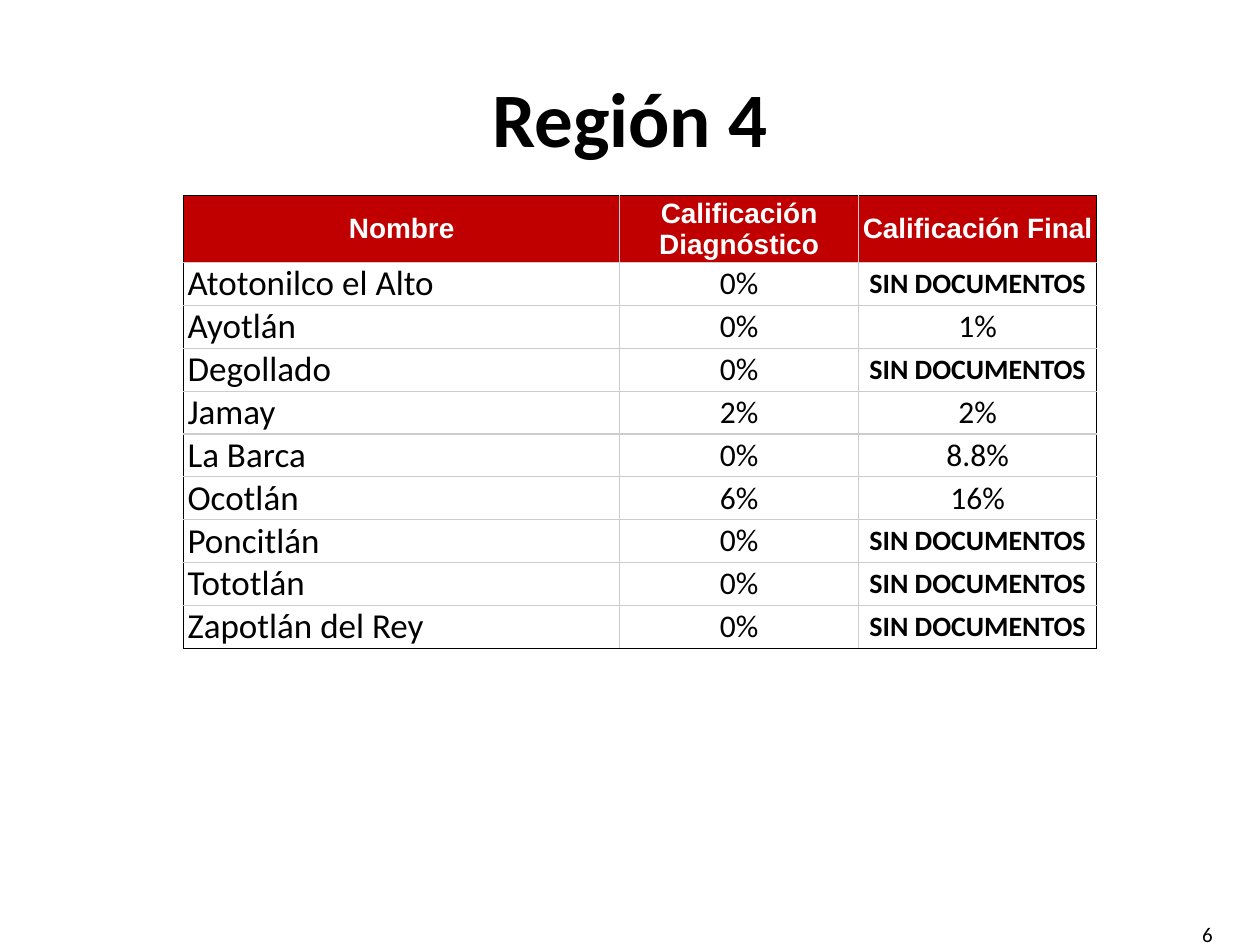
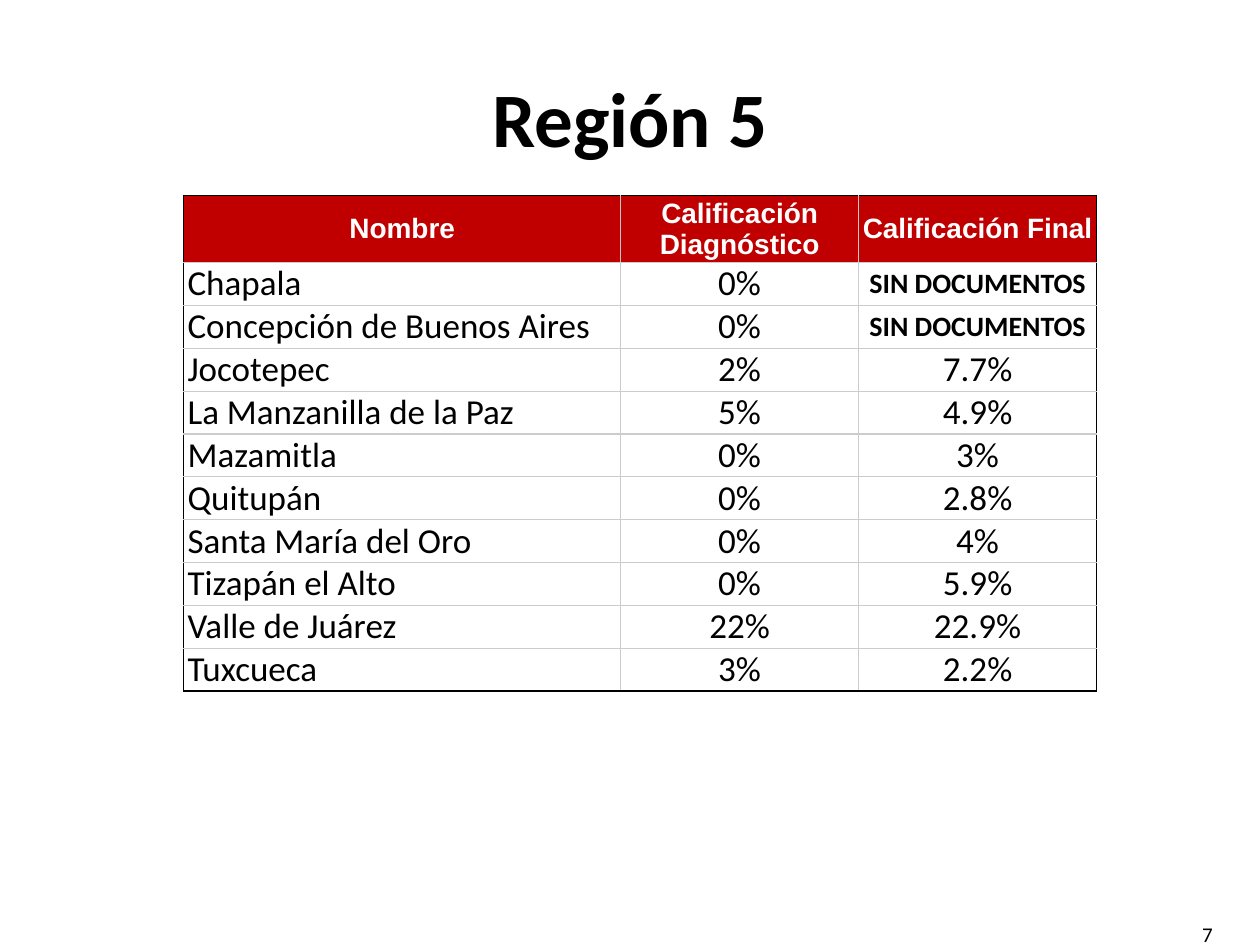
"""Build the regional score tables, one slide per region."""
from lxml.etree import SubElement
from pptx import Presentation
from pptx.dml.color import RGBColor
from pptx.enum.text import MSO_ANCHOR, PP_ALIGN
from pptx.oxml.ns import qn
from pptx.util import Pt

COLORS = {"ink": "000000", "header": "C00000", "paper": "FFFFFF", "grid": "CCCCCC"}
HEADINGS = ("Nombre", "Calificación Diagnóstico", "Calificación Final")
MISSING = "SIN DOCUMENTOS"
HEADER_HEIGHT, ROW_HEIGHT = 35.5, 24.5
TABLE_LEFT, TABLE_TOP = 105, 111.6

REGIONS = [
    {
        "title": "Región 4", "number": 6, "score_size": 18, "widths": (249.1, 136.6, 136),
        "rows": [
            ("Atotonilco el Alto", "0%", MISSING),
            ("Ayotlán", "0%", "1%"),
            ("Degollado", "0%", MISSING),
            ("Jamay", "2%", "2%"),
            ("La Barca", "0%", "8.8%"),
            ("Ocotlán", "6%", "16%"),
            ("Poncitlán", "0%", MISSING),
            ("Tototlán", "0%", MISSING),
            ("Zapotlán del Rey", "0%", MISSING),
        ],
    },
    {
        "title": "Región 5", "number": 7, "score_size": 20, "widths": (249.7, 136, 136),
        "rows": [
            ("Chapala", "0%", MISSING),
            ("Concepción de Buenos Aires", "0%", MISSING),
            ("Jocotepec", "2%", "7.7%"),
            ("La Manzanilla de la Paz", "5%", "4.9%"),
            ("Mazamitla", "0%", "3%"),
            ("Quitupán", "0%", "2.8%"),
            ("Santa María del Oro", "0%", "4%"),
            ("Tizapán el Alto", "0%", "5.9%"),
            ("Valle de Juárez", "22%", "22.9%"),
            ("Tuxcueca", "3%", "2.2%"),
        ],
    },
]


def write(frame, text, size, align, color="ink", bold=False, font="Calibri"):
    frame.text = text
    frame.word_wrap = True
    para = frame.paragraphs[0]
    para.alignment = align
    span = para.runs[0]
    span.font.name = font
    span.font.size = Pt(size)
    span.font.bold = bold
    span.font.color.rgb = RGBColor.from_string(COLORS[color])


def add_borders(cell, outer_sides):
    properties = cell._tc.get_or_add_tcPr()
    for side in "LRTB":
        outer = side in outer_sides
        line = SubElement(properties, qn(f"a:ln{side}"), w=str(Pt(1 if outer else 0.75)))
        fill = SubElement(line, qn("a:solidFill"))
        SubElement(fill, qn("a:srgbClr"), val=COLORS["ink" if outer else "grid"])


deck = Presentation()
deck.slide_width, deck.slide_height = Pt(720), Pt(540)

for region in REGIONS:
    page = deck.slides.add_slide(deck.slide_layouts[5])

    number_box = page.shapes.add_textbox(Pt(532), Pt(519), Pt(168), Pt(29))
    number_box.text_frame.vertical_anchor = MSO_ANCHOR.MIDDLE
    write(number_box.text_frame, str(region["number"]), 12, PP_ALIGN.RIGHT)

    title = page.shapes.title
    title.left, title.top, title.width, title.height = Pt(36), Pt(21.6), Pt(648), Pt(90)
    title.text_frame.vertical_anchor = MSO_ANCHOR.MIDDLE
    write(title.text_frame, region["title"], 44, PP_ALIGN.CENTER, bold=True)

    rows = [HEADINGS] + region["rows"]
    last_row, last_column = len(rows) - 1, len(HEADINGS) - 1
    table = page.shapes.add_table(
        len(rows), len(HEADINGS), Pt(TABLE_LEFT), Pt(TABLE_TOP),
        Pt(sum(region["widths"])), Pt(HEADER_HEIGHT + last_row * ROW_HEIGHT),
    ).table
    for column, width in zip(table.columns, region["widths"]):
        column.width = Pt(width)

    for r, values in enumerate(rows):
        table.rows[r].height = Pt(ROW_HEIGHT if r else HEADER_HEIGHT)
        for c, value in enumerate(values):
            cell = table.cell(r, c)
            cell.margin_left = cell.margin_right = Pt(2.2)
            cell.margin_top = cell.margin_bottom = Pt(0)
            cell.vertical_anchor = MSO_ANCHOR.MIDDLE
            edges = {"L": c == 0, "R": c == last_column, "T": r == 0, "B": r == last_row}
            add_borders(cell, [side for side, outer in edges.items() if outer])
            cell.fill.solid()
            cell.fill.fore_color.rgb = RGBColor.from_string(COLORS["paper" if r else "header"])
            if r == 0:
                write(cell.text_frame, value, 16, PP_ALIGN.CENTER, "paper", True, "Arial")
            elif c == 0:
                write(cell.text_frame, value, 20, PP_ALIGN.LEFT)
            elif value == MISSING:
                write(cell.text_frame, value, 16, PP_ALIGN.CENTER, bold=True)
            else:
                write(cell.text_frame, value, region["score_size"], PP_ALIGN.CENTER)

deck.save("out.pptx")
